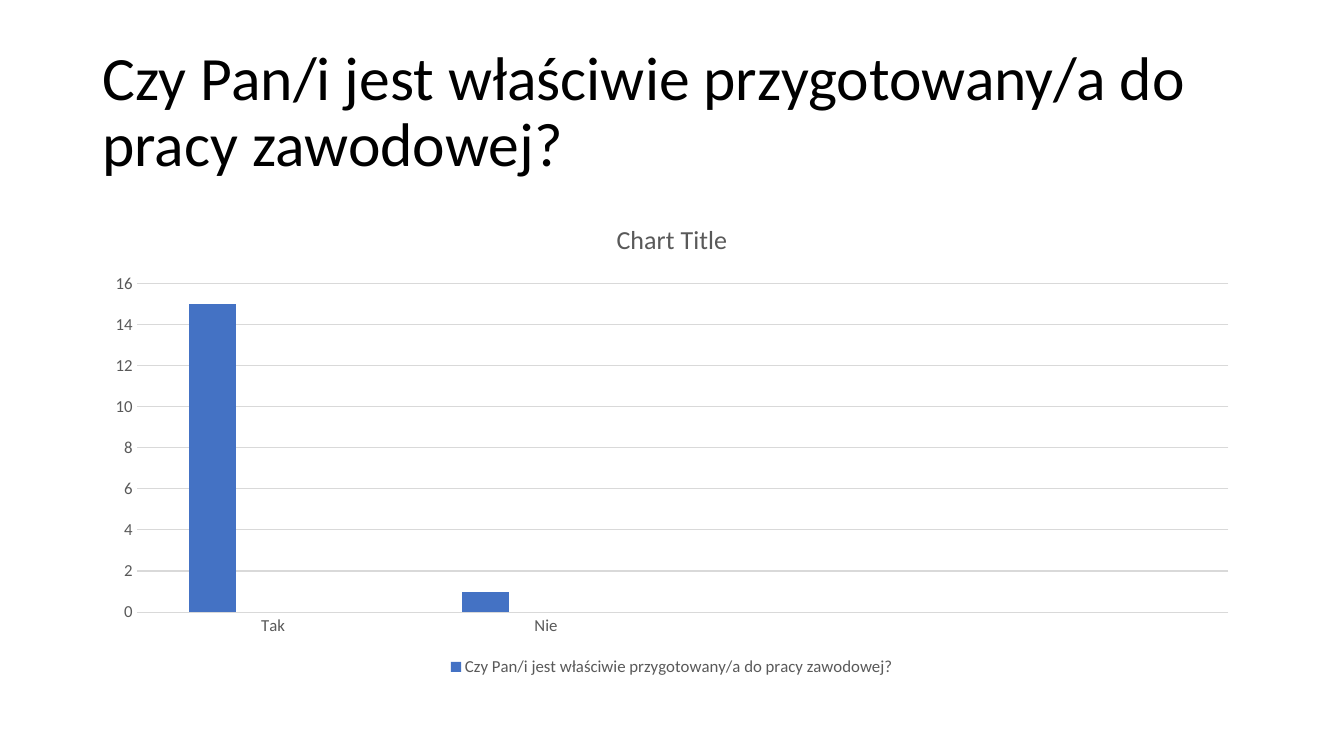
from pptx import Presentation
from pptx.chart.data import CategoryChartData
from pptx.dml.color import RGBColor
from pptx.enum.chart import XL_CHART_TYPE as ChartType, XL_LEGEND_POSITION as LegendPosition
from pptx.enum.chart import XL_TICK_MARK as TickMark
from pptx.enum.text import MSO_ANCHOR as Anchor
from pptx.oxml import parse_xml
from pptx.oxml.ns import nsdecls
from pptx.util import Pt

BLACK = RGBColor(0x00, 0x00, 0x00)
GREY = RGBColor(0x59, 0x59, 0x59)
LIGHT_GREY = RGBColor(0xD9, 0xD9, 0xD9)
BLUE = RGBColor(0x44, 0x72, 0xC4)
ORANGE = RGBColor(0xED, 0x7D, 0x31)
SILVER = RGBColor(0xA5, 0xA5, 0xA5)

FONT = "Calibri"
QUESTION = "Czy Pan/i jest właściwie przygotowany/a do pracy zawodowej?"
ANSWERS = ["Tak", "Nie", "", ""]
SERIES = [
    (QUESTION, [15, 1, None, None], BLUE),
    ("Series 2", [None] * 4, ORANGE),
    ("Series 3", [None] * 4, SILVER),
]


def set_font(font, size, color):
    font.name = FONT
    font.size = Pt(size)
    font.bold = False
    font.color.rgb = color


def set_line(line, color):
    line.color.rgb = color
    line.width = Pt(0.75)


def add_heading(page, left, top, width, height):
    box = page.shapes.add_textbox(Pt(left), Pt(top), Pt(width), Pt(height))
    frame = box.text_frame
    frame.word_wrap = True
    frame.vertical_anchor = Anchor.MIDDLE
    frame.text = QUESTION
    para = frame.paragraphs[0]
    para.line_spacing = 0.9
    set_font(para.runs[0].font, 44, BLACK)


def style_axes(chart):
    categories, values = chart.category_axis, chart.value_axis
    for axis in (categories, values):
        axis.major_tick_mark = axis.minor_tick_mark = TickMark.NONE
        set_font(axis.tick_labels.font, 12, GREY)
    set_line(categories.format.line, LIGHT_GREY)
    values.format.line.fill.background()
    values.has_major_gridlines = True
    set_line(values.major_gridlines.format.line, LIGHT_GREY)


def add_legend(chart):
    """Show only the first series, below the plot."""
    chart.has_legend = True
    legend = chart.legend
    legend.position = LegendPosition.BOTTOM
    legend.include_in_layout = False
    set_font(legend.font, 12, GREY)
    position = legend._element.find("{*}legendPos")
    for index in reversed(range(1, len(SERIES))):
        position.addnext(parse_xml(
            f'<c:legendEntry {nsdecls("c")}><c:idx val="{index}"/>'
            '<c:delete val="1"/></c:legendEntry>'))


def add_answer_chart(page, left, top, width, height):
    data = CategoryChartData()
    data.categories = ANSWERS
    for name, counts, _ in SERIES:
        data.add_series(name, counts)
    chart = page.shapes.add_chart(
        ChartType.COLUMN_CLUSTERED,
        Pt(left), Pt(top), Pt(width), Pt(height), data).chart
    set_font(chart.font, 10, BLACK)

    chart.has_title = True
    title = chart.chart_title
    title.include_in_layout = False
    title.text_frame.text = "Chart Title"
    set_font(title.text_frame.paragraphs[0].runs[0].font, 18.6, GREY)

    plot = chart.plots[0]
    plot.gap_width = 219
    plot.overlap = -27
    plot.vary_by_categories = False
    for series, (_, _, color) in zip(plot.series, SERIES):
        series.format.fill.solid()
        series.format.fill.fore_color.rgb = color
    style_axes(chart)
    add_legend(chart)


def main():
    deck = Presentation()
    deck.slide_width, deck.slide_height = Pt(960), Pt(540)
    page = deck.slides.add_slide(deck.slide_layouts[6])
    add_heading(page, 66, 28.75, 828, 104.4)
    add_answer_chart(page, 66, 143.75, 828, 342.6)
    deck.save("out.pptx")


if __name__ == "__main__":
    main()
